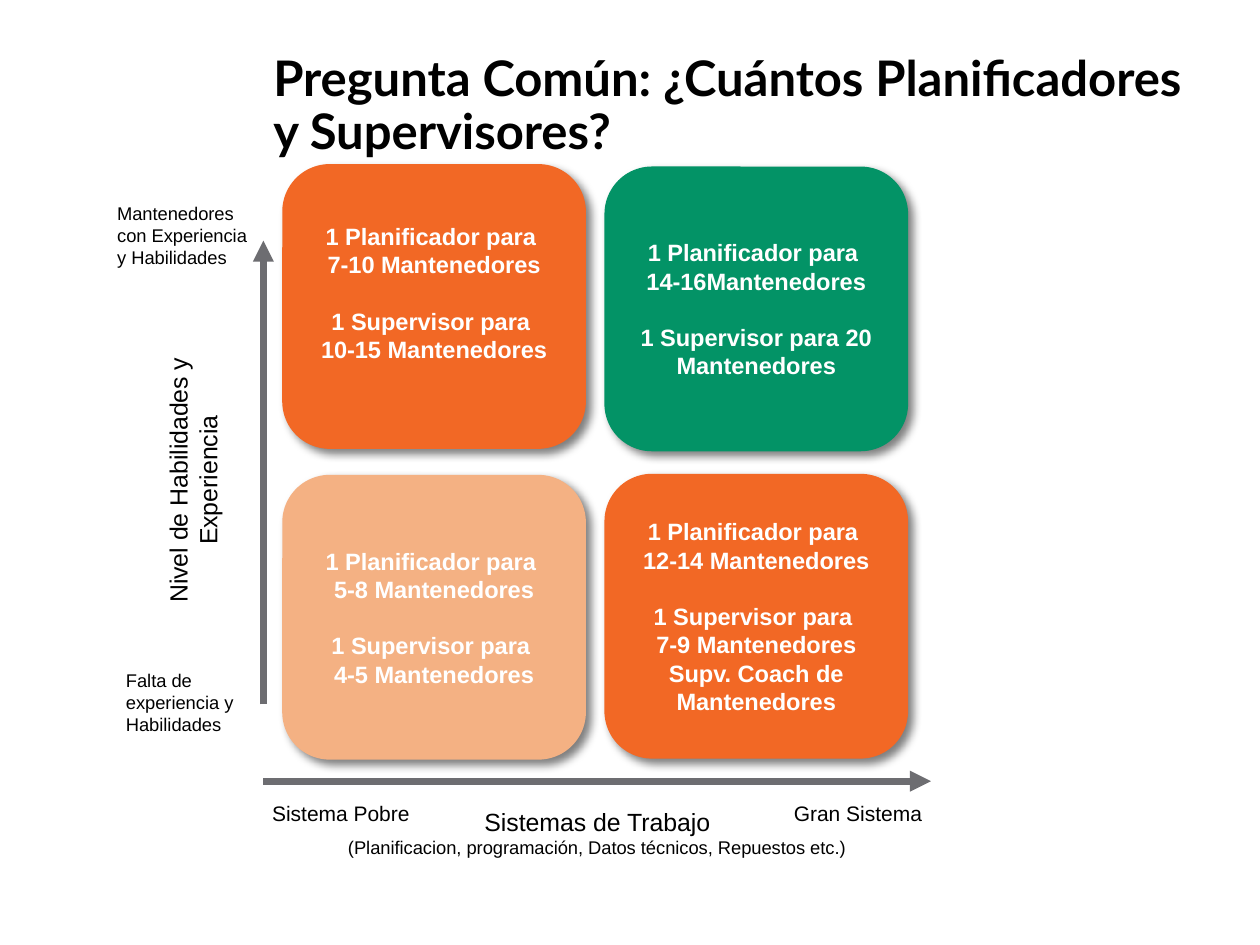
from lxml import etree
from pptx import Presentation
from pptx.dml.color import RGBColor
from pptx.enum.shapes import MSO_CONNECTOR, MSO_SHAPE
from pptx.enum.text import MSO_ANCHOR, MSO_AUTO_SIZE, PP_ALIGN
from pptx.oxml import parse_xml
from pptx.oxml.ns import nsdecls, qn
from pptx.util import Pt

LEFT, CENTER = PP_ALIGN.LEFT, PP_ALIGN.CENTER
TOP, MIDDLE = MSO_ANCHOR.TOP, MSO_ANCHOR.MIDDLE
NO_AUTOFIT = MSO_AUTO_SIZE.NONE
ROUNDED, STRAIGHT = MSO_SHAPE.ROUNDED_RECTANGLE, MSO_CONNECTOR.STRAIGHT
TITLE_ONLY = 5

COLORS = {
    "text": "000000",
    "inverse": "FFFFFF",
    "axis": "6D6D71",
    "orange": "F26825",
    "peach": "F4B183",
    "green": "039366",
    "shadow": "000000",
}


def color(name):
    return RGBColor.from_string(COLORS[name])


def write_text(frame, lines, size=10.5, font="Arial", ink="text", bold=False,
               align=LEFT, gaps=None, spacing=None):
    """Fill a frame; a line is text or (text, size), gaps maps line index to space before."""
    for index, line in enumerate(lines):
        text, line_size = line if isinstance(line, tuple) else (line, size)
        paragraph = frame.paragraphs[0] if index == 0 else frame.add_paragraph()
        paragraph.alignment = align
        if spacing:
            paragraph.line_spacing = spacing
        if gaps and index in gaps:
            paragraph.space_before = Pt(gaps[index])
        run = paragraph.add_run()
        run.text = text
        run.font.name = font
        run.font.size = Pt(line_size)
        run.font.bold = bold
        run.font.color.rgb = color(ink)


class SlideBuilder:
    box_width, box_height = 173.5, 162.7
    box_text_size = 13.5
    blank_line = 16
    axis_width = 4

    def __init__(self, presentation):
        self.slide = presentation.slides.add_slide(presentation.slide_layouts[TITLE_ONLY])

    def title(self, text, left, top, width, height):
        shape = self.slide.shapes.title
        shape.left, shape.top, shape.width, shape.height = map(Pt, (left, top, width, height))
        frame = shape.text_frame
        frame.word_wrap = True
        frame.auto_size = NO_AUTOFIT
        frame.vertical_anchor = MIDDLE
        write_text(frame, [text], size=28, font="Lato", bold=True, spacing=0.9)

    def axis(self, start, end):
        connector = self.slide.shapes.add_connector(STRAIGHT, *map(Pt, (*start, *end)))
        connector.line.color.rgb = color("axis")
        connector.line.width = Pt(self.axis_width)
        etree.SubElement(connector.line._get_or_add_ln(), qn("a:tailEnd"), type="triangle")
        etree.SubElement(connector._element.spPr, qn("a:effectLst"))

    def box(self, left, top, fill, lines, lift=0):
        """Rounded quadrant; lift is extra room kept below the text."""
        shape = self.slide.shapes.add_shape(
            ROUNDED, *map(Pt, (left, top, self.box_width, self.box_height)))
        shape.fill.solid()
        shape.fill.fore_color.rgb = color(fill)
        shape.line.fill.background()
        shape._element.spPr.append(parse_xml(
            f'<a:effectLst {nsdecls("a")}>'
            f'<a:outerShdw blurRad="{Pt(5)}" dist="{Pt(4)}" dir="2700000" algn="tl" rotWithShape="0">'
            f'<a:srgbClr val="{COLORS["shadow"]}"><a:alpha val="50000"/></a:srgbClr>'
            '</a:outerShdw></a:effectLst>'))
        frame = shape.text_frame
        frame.word_wrap = True
        frame.vertical_anchor = MIDDLE
        frame.margin_bottom = Pt(3.6 + lift)
        write_text(frame, lines, size=self.box_text_size, ink="inverse", bold=True,
                   align=CENTER, gaps={2: self.blank_line})

    def label(self, lines, left, top, width, height, wrap=True, rotation=0, **text_format):
        shape = self.slide.shapes.add_textbox(*map(Pt, (left, top, width, height)))
        shape.rotation = rotation
        frame = shape.text_frame
        frame.word_wrap = wrap
        frame.auto_size = NO_AUTOFIT
        frame.vertical_anchor = TOP
        frame.margin_left = frame.margin_right = Pt(5)
        frame.margin_top = frame.margin_bottom = Pt(3)
        write_text(frame, lines, **text_format)


def main():
    presentation = Presentation()
    presentation.slide_width, presentation.slide_height = Pt(720), Pt(540)
    builder = SlideBuilder(presentation)

    builder.title("Pregunta Común: ¿Cuántos Planificadores y Supervisores?",
                  149, 23, 537, 76.3)

    # Axes
    builder.axis((150.5, 402.5), (150.5, 137.5))
    builder.axis((150.5, 446.4), (532, 446.4))

    # Quadrants
    left_column, right_column = 161.3, 345.4
    planner, supervisor = "1 Planificador para ", "1 Supervisor para "
    builder.box(left_column, 93.8, "orange",
                [planner, "7-10 Mantenedores", supervisor, "10-15 Mantenedores"],
                lift=builder.blank_line)
    builder.box(right_column, 270.8, "orange",
                [planner, "12-14 Mantenedores", supervisor, "7-9 Mantenedores",
                 "Supv. Coach de Mantenedores"])
    builder.box(left_column, 271.4, "peach",
                [planner, "5-8 Mantenedores", supervisor, "4-5 Mantenedores"])
    builder.box(right_column, 95.2, "green",
                [planner, "14-16Mantenedores", "1 Supervisor para 20 Mantenedores"])

    # Vertical axis labels
    builder.label(["Nivel de Habilidades y Experiencia"], 36, 236.9, 182.9, 74.9,
                  rotation=270, size=14.2, align=CENTER)
    builder.label(["Mantenedores con Experiencia y Habilidades"], 62, 112.3, 88.6, 58.3)
    builder.label(["Falta de experiencia y Habilidades"], 67, 379.4, 88.6, 58.3)

    # Horizontal axis labels
    builder.label(["Sistema Pobre"], 150.5, 454.3, 90, 26.6, wrap=False, size=12)
    builder.label([("Sistemas de Trabajo", 14.2),
                   "(Planificacion, programación, Datos técnicos, Repuestos etc.)"],
                  190.8, 457.9, 301, 47.5, wrap=False, align=CENTER)
    builder.label(["Gran Sistema"], 448.6, 454.3, 85, 26.6, wrap=False, size=12)

    presentation.save("out.pptx")


if __name__ == "__main__":
    main()
